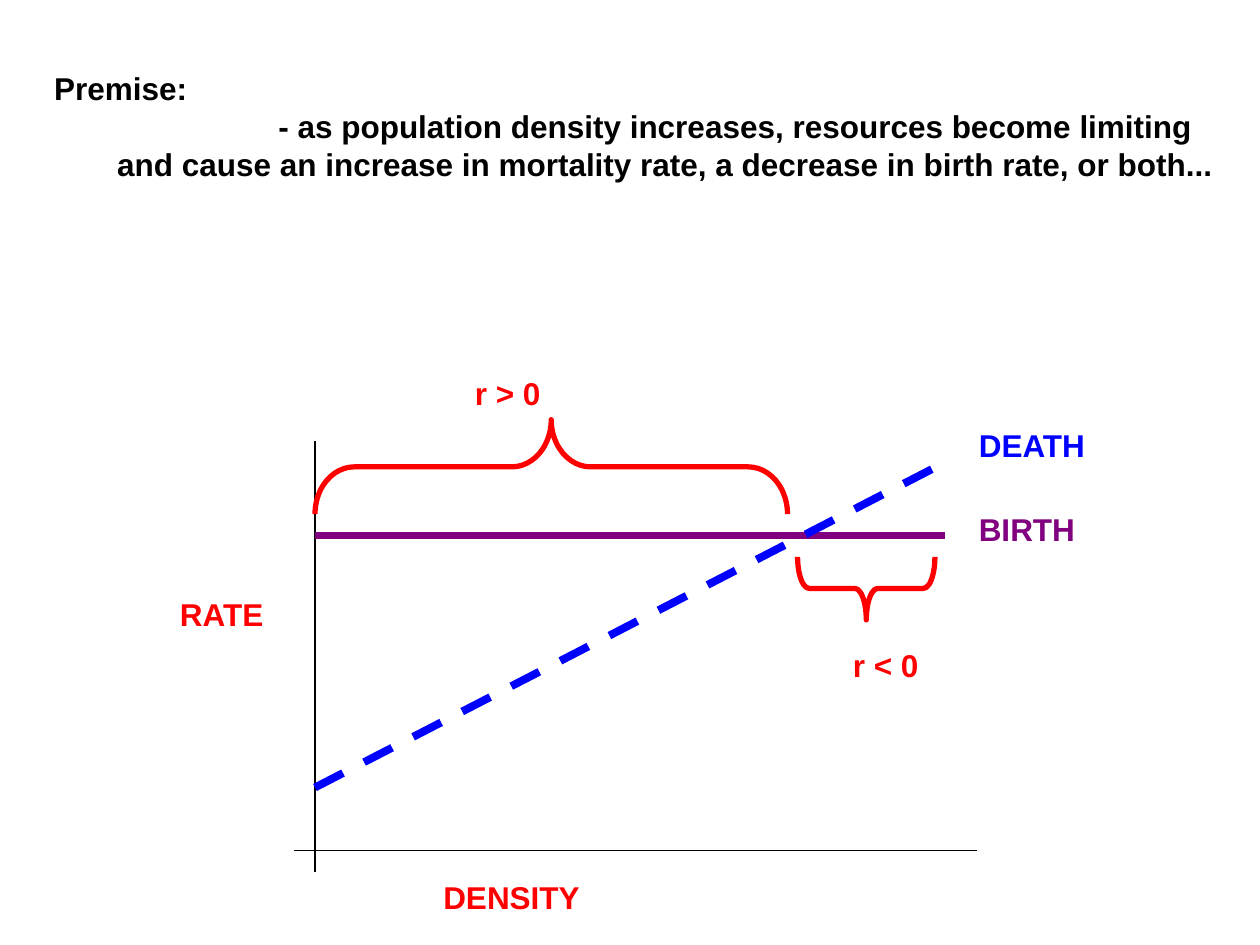
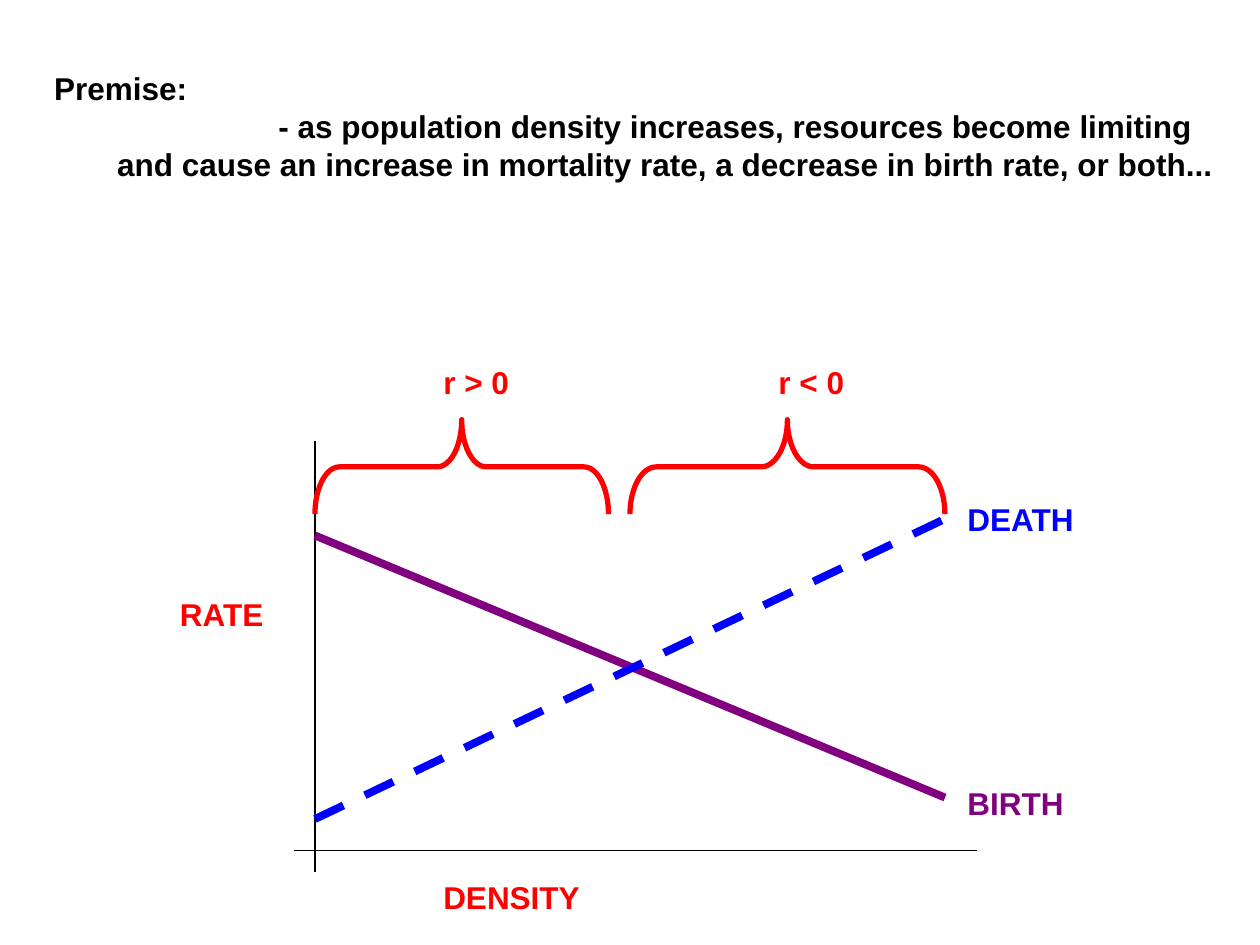
from dataclasses import dataclass

from lxml import etree
from pptx import Presentation
from pptx.dml.color import RGBColor
from pptx.enum import dml, shapes, text
from pptx.oxml import ns
from pptx.util import Inches, Pt


@dataclass(frozen=True)
class Theme:
    font: str = "Arial"
    size: float = 18
    ink: str = "000000"
    accent: str = "FF0000"
    birth: str = "800080"
    death: str = "0000FF"
    axis_width: float = 0.75
    brace_width: float = 3
    curve_width: float = 4.5


THEME = Theme()

PREMISE = (
    "Premise:",
    "- as population density increases, resources become limiting and cause an "
    "increase in mortality rate, a decrease in birth rate, or both...",
)
PREMISE_BOX = (0.33, 0.5, 9.42, 1.65)
HANGING_MARGIN, FIRST_LINE_INDENT = 0.5, 1.28

AXES = [((2.5, 3.5), (2.5, 6.92)), ((2.33, 6.75), (7.75, 6.75))]
AXIS_LABELS = [("DENSITY", 3.42, 6.92, 3.83), ("RATE", 1.33, 4.67, 0.92)]
LABEL_HEIGHT = 0.4

# Lines are (start, end); labels are (text, left, top, width);
# braces are (left, right, top, depth, direction of the tip).
GRAPHS = [
    {
        "birth": ((2.5, 4.25), (7.5, 4.25)),
        "birth label": ("BIRTH", 7.67, 4, 1.83),
        "death": ((2.5, 6.25), (7.5, 3.67)),
        "death label": ("DEATH", 7.67, 3.33, 1.42),
        "braces": [(2.5, 6.25, 3.33, 0.75, "up"), (6.33, 7.42, 4.42, 0.5, "down")],
        "growth labels": [("r > 0", 3.67, 2.92, 1.58), ("r < 0", 6.67, 5.08, 1.58)],
    },
    {
        "birth": ((2.5, 4.25), (7.5, 6.33)),
        "birth label": ("BIRTH", 7.58, 6.17, 1.83),
        "death": ((2.5, 6.5), (7.58, 4.08)),
        "death label": ("DEATH", 7.58, 3.92, 1.42),
        "braces": [(2.5, 4.83, 3.33, 0.75, "up"), (5, 7.5, 3.33, 0.75, "up")],
        "growth labels": [("r > 0", 3.42, 2.83, 1.58), ("r < 0", 6.08, 2.83, 1.58)],
    },
]


def write_text(shape, *lines, color=THEME.ink, margin=0, indent=0):
    """Fill a shape with bold lines; margin and indent apply after the first."""
    frame = shape.text_frame
    frame.word_wrap = True
    frame.auto_size = text.MSO_AUTO_SIZE.NONE
    frame.vertical_anchor = text.MSO_ANCHOR.TOP
    for index, line in enumerate(lines):
        paragraph = frame.add_paragraph() if index else frame.paragraphs[0]
        paragraph.alignment = text.PP_ALIGN.LEFT
        if index:
            properties = paragraph._p.get_or_add_pPr()
            properties.set("marL", str(Inches(margin)))
            properties.set("indent", str(Inches(indent)))
        run = paragraph.add_run()
        run.text = line
        run.font.name = THEME.font
        run.font.size = Pt(THEME.size)
        run.font.bold = True
        run.font.color.rgb = RGBColor.from_string(color)


def add_premise(slide):
    title = slide.shapes.title
    title.left, title.top, title.width, title.height = map(Inches, PREMISE_BOX)
    write_text(title, *PREMISE, margin=HANGING_MARGIN, indent=FIRST_LINE_INDENT)


def add_label(slide, label, color):
    words, left, top, width = label
    box = slide.shapes.add_textbox(*map(Inches, (left, top, width, LABEL_HEIGHT)))
    write_text(box, words, color=color)


def format_line(shape, color, width):
    shape.line.color.rgb = RGBColor.from_string(color)
    shape.line.width = Pt(width)


def add_line(slide, ends, color, width, dash=None):
    start, end = ends
    line = slide.shapes.add_connector(
        shapes.MSO_CONNECTOR.STRAIGHT, *map(Inches, (*start, *end)))
    format_line(line, color, width)
    if dash:
        line.line.dash_style = dash
    etree.SubElement(line._element.spPr, ns.qn("a:effectLst"))


def add_brace(slide, left, right, top, depth, tip):
    """Turn an upright right brace so that it spans left to right."""
    span = right - left
    upright_left = (left + right - depth) / 2
    upright_top = top + (depth - span) / 2
    brace = slide.shapes.add_shape(
        shapes.MSO_SHAPE.RIGHT_BRACE,
        *map(Inches, (upright_left, upright_top, depth, span)))
    brace.rotation = 270 if tip == "up" else 90
    brace.adjustments[0] = span / depth / 12
    brace.adjustments[1] = 0.5
    brace.shadow.inherit = False
    brace.fill.background()
    format_line(brace, THEME.accent, THEME.brace_width)


def add_graph(slide, graph):
    for axis in AXES:
        add_line(slide, axis, THEME.ink, THEME.axis_width)
    for label in AXIS_LABELS:
        add_label(slide, label, THEME.accent)
    for rate, color, dash in (
        ("birth", THEME.birth, None),
        ("death", THEME.death, dml.MSO_LINE.DASH),
    ):
        add_line(slide, graph[rate], color, THEME.curve_width, dash)
        add_label(slide, graph[f"{rate} label"], color)
    for brace in graph["braces"]:
        add_brace(slide, *brace)
    for label in graph["growth labels"]:
        add_label(slide, label, THEME.accent)


def main():
    presentation = Presentation()
    presentation.slide_width, presentation.slide_height = Inches(10), Inches(7.5)
    title_only = presentation.slide_layouts.get_by_name("Title Only")
    for graph in GRAPHS:
        slide = presentation.slides.add_slide(title_only)
        add_premise(slide)
        add_graph(slide, graph)
    presentation.save("out.pptx")


if __name__ == "__main__":
    main()
